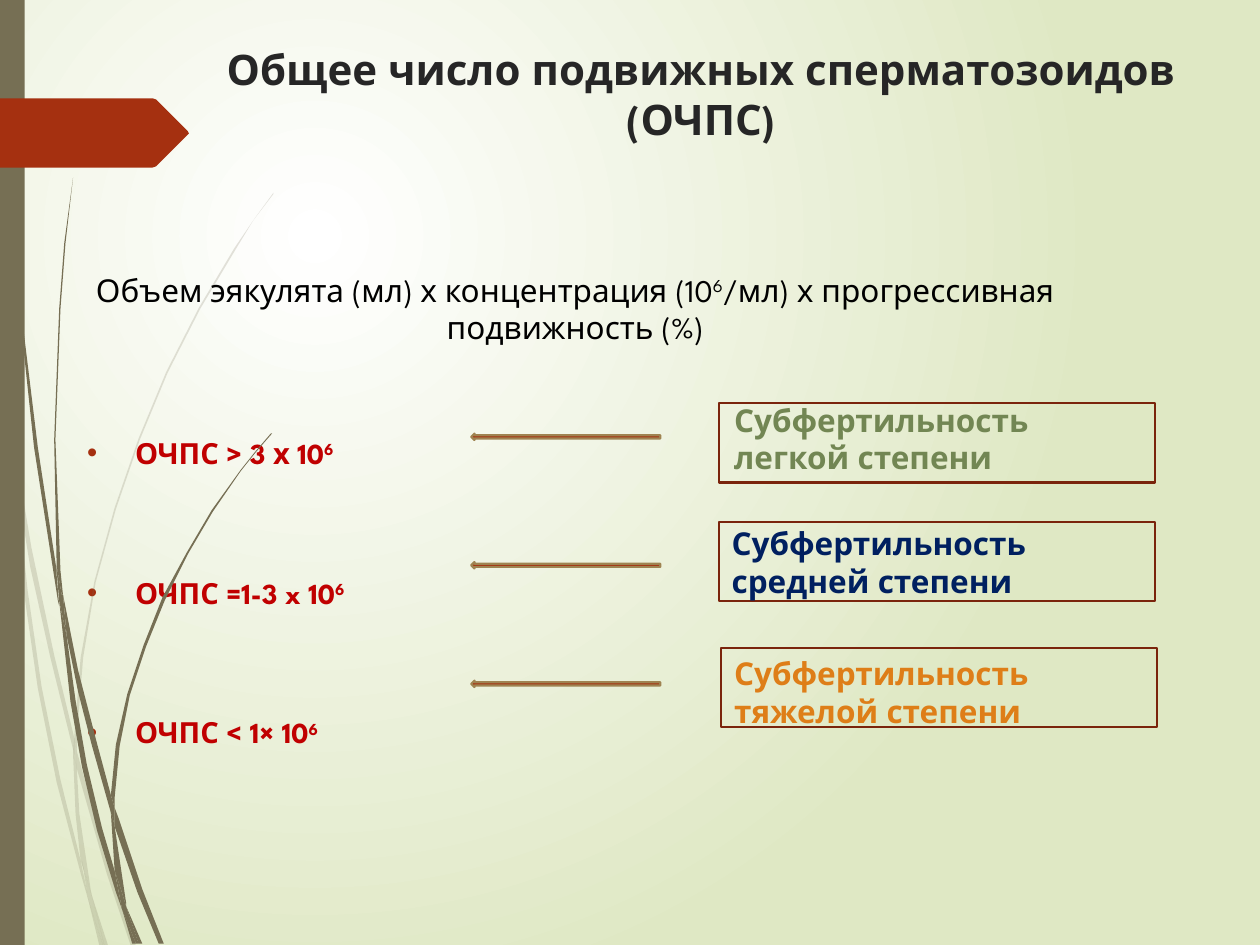
from lxml import etree
from pptx import Presentation
from pptx.dml.color import RGBColor
from pptx.enum.shapes import MSO_SHAPE
from pptx.enum.text import MSO_ANCHOR, MSO_AUTO_SIZE, PP_ALIGN
from pptx.oxml.ns import qn
from pptx.util import Cm, Pt

RECTANGLE, ARROW = MSO_SHAPE.RECTANGLE, MSO_SHAPE.RIGHT_ARROW
TOP, CENTER, NO_FIT = MSO_ANCHOR.TOP, PP_ALIGN.CENTER, MSO_AUTO_SIZE.NONE
FONT = "League Spartan"
COLORS = {
    "white": "FFFFFF", "pale green": "DFE8C4", "stem": "766F54", "rust": "A53010",
    "frame": "7A240C", "sand": "9F8351", "title": "262626", "black": "000000",
    "red": "C00000", "green": "728653", "navy": "002060", "orange": "DE7E18",
}


def paint(shape, fill=None, line=None):
    shape.shadow.inherit = False
    if fill:
        shape.fill.solid()
        shape.fill.fore_color.rgb = RGBColor.from_string(COLORS[fill])
    else:
        shape.fill.background()
    if line:
        shape.line.color.rgb = RGBColor.from_string(COLORS[line])
        shape.line.width = Pt(1.25)
    else:
        shape.line.fill.background()


def add_span(para, text, size, color, bold=True, raised=False):
    span = para.add_run()
    span.text = text
    span.font.name = FONT
    span.font.size = Pt(size)
    span.font.bold = bold
    span.font.color.rgb = RGBColor.from_string(COLORS[color])
    if raised:
        span.font._element.set("baseline", "30000")


deck = Presentation()
deck.slide_width, deck.slide_height = Cm(25.4), Cm(19.05)
page = deck.slides.add_slide(deck.slide_layouts[1])

# Background: radial gradient
backdrop = page.background.fill
backdrop.gradient()
for stop, color in zip(backdrop.gradient_stops, ("white", "pale green")):
    stop.color.rgb = RGBColor.from_string(COLORS[color])
gradient = page._element.find(".//" + qn("a:gradFill"))
gradient.remove(gradient.find(qn("a:lin")))
spread = etree.SubElement(gradient, qn("a:path"), path="circle")
etree.SubElement(spread, qn("a:fillToRect"), l="50000", t="50000", r="100000", b="100000")

# Grass stems, outlines in hundredths of an inch
UNIT = Cm(2.54) / 100
pale_stems = [
    [(8, 350), (6, 322), (0, 282), (0, 299), (7, 344)],
    [(40, 522), (59, 599), (59, 586), (43, 520), (25, 435), (10, 345), (12, 376), (24, 450)],
    [(64, 607), (61, 596), (61, 610), (85, 694), (104, 751), (108, 751), (88, 692)],
    [(83, 751), (86, 751), (73, 711)],
    [(64, 683), (48, 619), (33, 545), (22, 469), (12, 376), (8, 350), (19, 470),
     (30, 546), (45, 621), (64, 693), (70, 714), (69, 707)],
    [(58, 599), (60, 646), (64, 683), (67, 692), (73, 711), (72, 706), (63, 646),
     (61, 610), (61, 608)],
    [(61, 584), (66, 522), (76, 462), (92, 404), (111, 349), (133, 296), (159, 245),
     (187, 198), (201, 175), (217, 154), (217, 153), (201, 175), (186, 197), (158, 244),
     (132, 295), (110, 348), (91, 403), (75, 461), (64, 522), (59, 584), (59, 586), (61, 596)],
    [(70, 714), (79, 751), (82, 751)],
    [(61, 608), (61, 610), (61, 596), (59, 586), (58, 599)],
    [(67, 692), (65, 683), (69, 707), (70, 714), (82, 751), (83, 751), (73, 711)],
]
dark_stems = [
    [(5, 110), (14, 233), (27, 355), (46, 477), (47, 481), (45, 457), (45, 453), (30, 355),
     (15, 232), (6, 109), (4, 48), (3, 0), (2, 0), (3, 48)],
    [(73, 592), (88, 645), (88, 633), (88, 631), (77, 590), (62, 532), (50, 472), (53, 505),
     (62, 549)],
    [(94, 649), (91, 641), (91, 656), (109, 708), (126, 749), (130, 749), (113, 706)],
    [(91, 691), (81, 657), (69, 607), (60, 556), (53, 505), (47, 477), (56, 557), (65, 608),
     (77, 659), (92, 708), (97, 722), (96, 717)],
    [(50, 472), (48, 453), (44, 349), (48, 245), (52, 193), (58, 141), (51, 193), (47, 245),
     (43, 349), (45, 449), (49, 472)],
    [(110, 749), (113, 749), (100, 719)],
    [(47, 477), (53, 505), (50, 472), (49, 472), (45, 449), (45, 453)],
    [(91, 633), (95, 592), (103, 552), (116, 513), (131, 476), (149, 440), (169, 406),
     (191, 374), (203, 359), (216, 344), (215, 344), (203, 358), (191, 373), (168, 405),
     (148, 439), (129, 474), (114, 512), (101, 551), (92, 591), (88, 631), (91, 641)],
    [(97, 722), (105, 749), (108, 749)],
    [(88, 645), (91, 691), (96, 706), (100, 719), (100, 716), (91, 656), (90, 651)],
    [(88, 645), (90, 651), (91, 656), (91, 641), (88, 631), (88, 633)],
    [(96, 706), (91, 691), (96, 717), (97, 722), (108, 749), (110, 749), (100, 719)],
]
for stems, alpha in ((pale_stems, "20000"), (dark_stems, None)):
    tuft = page.shapes.add_group_shape()
    for start, *rest in stems:
        outline = tuft.shapes.build_freeform(*start, scale=UNIT)
        outline.add_line_segments(rest)
        stem = outline.convert_to_shape()
        paint(stem, "stem")
        if alpha:
            tint = stem._element.spPr.find(".//" + qn("a:srgbClr"))
            etree.SubElement(tint, qn("a:alpha"), val=alpha)

# Side bar and page tag
side_bar = page.shapes.add_shape(RECTANGLE, 0, 0, Cm(0.5), deck.slide_height)
paint(side_bar, "stem")
outline = page.shapes.build_freeform(0, 78, scale=UNIT)
outline.add_line_segments([(121, 78), (124, 79), (149, 104), (149.5, 105.5), (149, 107),
                           (124, 132), (121, 133), (0, 133)])
paint(outline.convert_to_shape(), "rust")

# Title
title = page.shapes.title
title.left, title.top, title.width, title.height = Cm(4.04), Cm(0.74), Cm(20.19), Cm(3.33)
frame = title.text_frame
frame.auto_size, frame.vertical_anchor = NO_FIT, TOP
para = frame.paragraphs[0]
para.alignment = CENTER
add_span(para, "Общее число подвижных сперматозоидов (ОЧПС)", 24, "title")

# Bulleted thresholds
body = page.placeholders[1]
body.left, body.top, body.width, body.height = Cm(1.5), Cm(6.53), Cm(11.61), Cm(8.23)
frame = body.text_frame
frame.auto_size, frame.vertical_anchor = NO_FIT, TOP
frame.margin_top = Cm(2.24)
for index, threshold in enumerate(("ОЧПС > 3 х 10", "ОЧПС =1-3 x 10", "ОЧПС < 1× 10")):
    para = frame.add_paragraph() if index else frame.paragraphs[0]
    para.space_before = Pt(60 if index else 0)
    settings = para._p.get_or_add_pPr()
    settings.set("marL", str(Cm(0.97)))
    settings.set("indent", str(-Cm(0.97)))
    bullet_color = etree.SubElement(settings, qn("a:buClr"))
    etree.SubElement(bullet_color, qn("a:srgbClr"), val=COLORS["rust"])
    etree.SubElement(settings, qn("a:buFont"), typeface="Arial")
    etree.SubElement(settings, qn("a:buChar"), char="•")
    add_span(para, threshold, 16.6, "red")
    add_span(para, "6", 16.6, "red", raised=True)

# Formula
formula = page.shapes.add_textbox(Cm(1.5), Cm(5.33), Cm(20.19), Cm(1.8))
formula.text_frame.word_wrap = True
para = formula.text_frame.paragraphs[0]
para.alignment = CENTER
add_span(para, "Объем эякулята (мл) х концентрация (10", 18, "black", bold=False)
add_span(para, "6", 18, "black", bold=False, raised=True)
add_span(para, "/мл) х прогрессивная подвижность (%)", 18, "black", bold=False)

# Arrows, frames and degrees of subfertility
degrees = [
    # arrow top, frame left and top, label left and top, wording, colour
    (8.74, 14.5, 8.13, 14.55, 7.95, "легкой степени", "green"),
    (11.33, 14.5, 10.52, 14.5, 10.44, "средней степени", "navy"),
    (13.72, 14.53, 13.06, 14.55, 13.06, "тяжелой степени", "orange"),
]
for arrow_top, frame_left, frame_top, label_left, label_top, degree, color in degrees:
    arrow = page.shapes.add_shape(ARROW, Cm(9.5), Cm(arrow_top), Cm(3.81), Cm(0.13))
    arrow.rotation = 180
    paint(arrow, "rust", "sand")
    border = page.shapes.add_shape(RECTANGLE, Cm(frame_left), Cm(frame_top), Cm(8.79), Cm(1.6))
    paint(border, line="frame")
    label = page.shapes.add_textbox(Cm(label_left), Cm(label_top), Cm(12.7), Cm(1.8))
    label.text_frame.word_wrap = True
    para = label.text_frame.paragraphs[0]
    add_span(para, "Субфертильность", 18, color)
    para.add_line_break()
    add_span(para, degree, 18, color)

deck.save("out.pptx")
